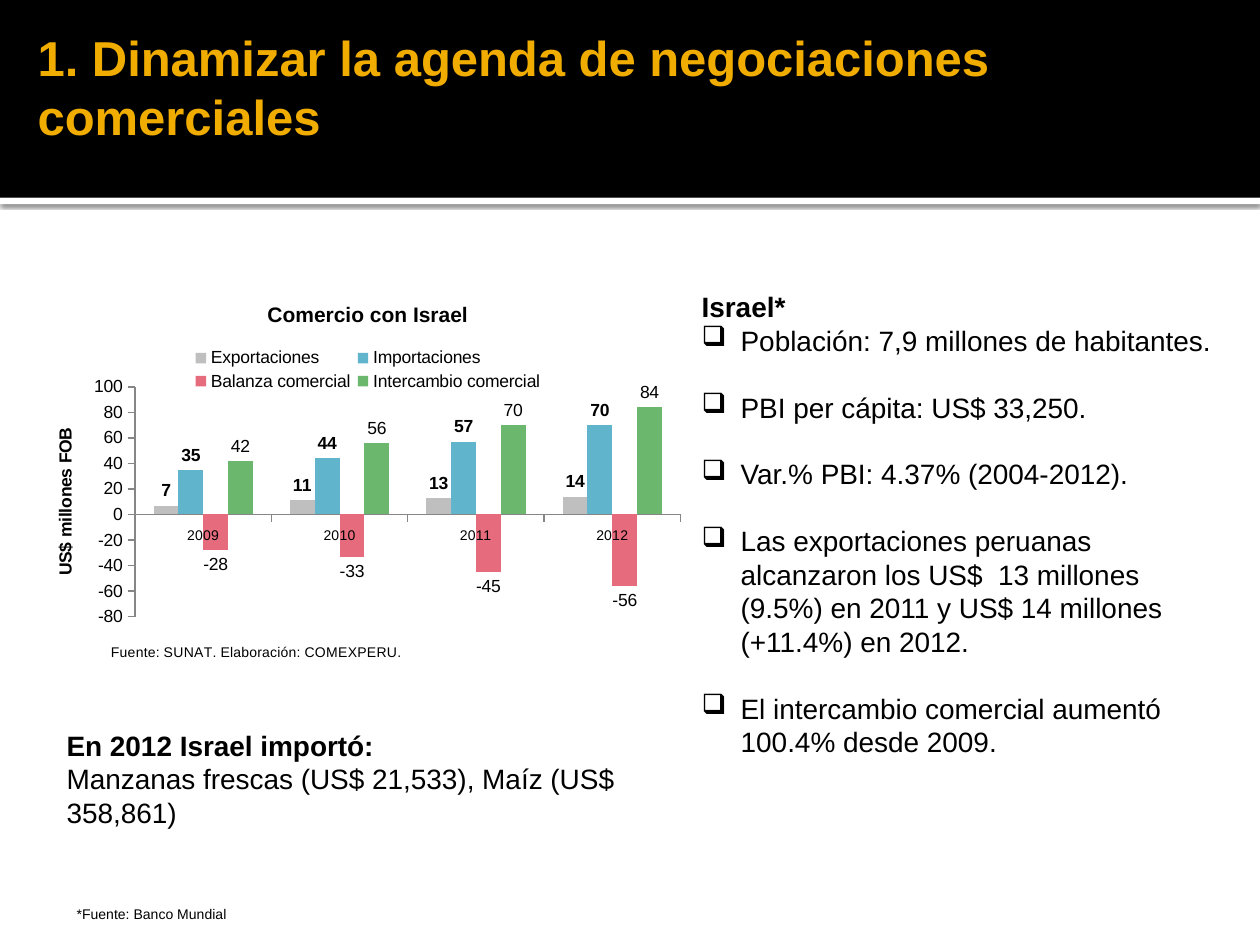
from lxml import etree
from pptx import Presentation, util as u
from pptx.chart.data import CategoryChartData
from pptx.dml.color import RGBColor
from pptx.enum import chart as charts, shapes, text
from pptx.oxml import parse_xml
from pptx.oxml.ns import nsdecls, qn

BLACK = RGBColor(0, 0, 0)
WHITE = RGBColor(0xFF, 0xFF, 0xFF)
GOLD = RGBColor(0xF0, 0xAD, 0x00)
AXIS_GRAY = RGBColor(0x86, 0x86, 0x86)
SERIES = [
    ("Exportaciones", (7, 11, 13, 14), RGBColor(0xBF, 0xBF, 0xBF), True),
    ("Importaciones", (35, 44, 57, 70), RGBColor(0x60, 0xB5, 0xCC), True),
    ("Balanza comercial", (-28, -33, -45, -56), RGBColor(0xE6, 0x6C, 0x7D), False),
    ("Intercambio comercial", (42, 56, 70, 84), RGBColor(0x6B, 0xB7, 0x6D), False),
]
FACTS = [
    "Población: 7,9 millones de habitantes.",
    "PBI per cápita: US$ 33,250.",
    "Var.% PBI: 4.37% (2004-2012).",
    "Las exportaciones peruanas alcanzaron los US$  13 millones (9.5%) en 2011 "
    "y US$ 14 millones (+11.4%) en 2012.",
    "El intercambio comercial aumentó 100.4% desde 2009.",
]

presentation = Presentation()
presentation.slide_width, presentation.slide_height = u.Inches(10), u.Inches(7.5)
slide = presentation.slides.add_slide(presentation.slide_layouts[6])


def add_text(box, lines, size, color=BLACK):
    """Add a text box; each line is (wording, bold, bulleted)."""
    shape = slide.shapes.add_textbox(*map(u.Inches, box))
    frame = shape.text_frame
    frame.word_wrap = True
    for index, (wording, bold, bulleted) in enumerate(lines):
        paragraph = frame.paragraphs[0] if index == 0 else frame.add_paragraph()
        paragraph.text = wording
        if bulleted:
            properties = paragraph._p.get_or_add_pPr()
            properties.set("marL", str(u.Inches(0.31)))
            properties.set("indent", str(-u.Inches(0.31)))
            etree.SubElement(properties, qn("a:buChar")).set("char", "❑")
            if index > 1:
                paragraph.space_before = u.Pt(19)
        font = paragraph.font
        font.name, font.size, font.bold = "Arial", u.Pt(size), bold
        font.color.rgb = color
    return frame


def place(element, before, **shares):
    """Give a chart part a manual layout in shares of the chart's size."""
    for old in element.findall(qn("c:layout")):
        element.remove(old)
    modes = "".join(f'<c:{axis}Mode val="edge"/>' for axis in "xy")
    values = "".join(f'<c:{key} val="{share}"/>' for key, share in shares.items())
    target = '<c:layoutTarget val="inner"/>' if before is None else ""
    layout = parse_xml(f'<c:layout {nsdecls("c")}><c:manualLayout>{target}{modes}{values}'
                       '</c:manualLayout></c:layout>')
    if before is None:
        element.insert(0, layout)
    else:
        element.find(qn(before)).addnext(layout)


# Header band and the white strip with its shadow
for top, height, color in ((1.57, 0.05, WHITE), (0, 1.57, BLACK)):
    band = slide.shapes.add_shape(shapes.MSO_SHAPE.RECTANGLE, 0, u.Inches(top),
                                  presentation.slide_width, u.Inches(height))
    band.shadow.inherit = False
    band.fill.solid()
    band.fill.fore_color.rgb = color
    band.line.fill.background()
    if color == WHITE:
        effects = band._element.spPr.find(qn("a:effectLst"))
        effects.append(parse_xml(
            f'<a:outerShdw {nsdecls("a")} blurRad="{u.Pt(2.5)}" dist="{u.Pt(0.8)}" '
            'dir="5400000" algn="tl" rotWithShape="0"><a:srgbClr val="000000">'
            '<a:alpha val="60000"/></a:srgbClr></a:outerShdw>'))

title = add_text((0.2, 0.06, 7.72, 1.25),
                 [("1. Dinamizar la agenda de negociaciones comerciales", True, False)], 28, GOLD)
title.vertical_anchor = text.MSO_ANCHOR.MIDDLE
title.margin_right = u.Inches(0.05)

# Trade chart
data = CategoryChartData(number_format="#,##0")
data.categories = ["2009", "2010", "2011", "2012"]
for name, values, _, _ in SERIES:
    data.add_series(name, values)
chart = slide.shapes.add_chart(charts.XL_CHART_TYPE.COLUMN_CLUSTERED,
                               *map(u.Inches, (0.28, 2.25, 5.28, 3.04)), data).chart
chart.font.name, chart.font.size = "Arial", u.Pt(10)
chart.font.color.rgb = BLACK

plot = chart.plots[0]
plot.gap_width, plot.overlap, plot.vary_by_categories = 150, 0, False
for series, (_, _, color, bold) in zip(plot.series, SERIES):
    series.format.fill.solid()
    series.format.fill.fore_color.rgb = color
    series.invert_if_negative = False
    labels = series.data_labels
    labels.show_value = True
    labels.number_format, labels.number_format_is_linked = "#,##0", False
    labels.position = charts.XL_LABEL_POSITION.OUTSIDE_END
    labels.font.name, labels.font.size, labels.font.bold = "Arial", u.Pt(10), bold
    labels.font.color.rgb = BLACK

category_axis, value_axis = chart.category_axis, chart.value_axis
value_axis.minimum_scale, value_axis.maximum_scale, value_axis.major_unit = -80, 100, 20
value_axis.has_major_gridlines = False
category_axis.tick_labels.font.size = u.Pt(8)
for axis in (category_axis, value_axis):
    axis.major_tick_mark = charts.XL_TICK_MARK.OUTSIDE
    axis.format.line.color.rgb = AXIS_GRAY
    axis.format.line.width = u.Pt(0.75)

for owner, wording, size, bold in (
        (chart.chart_title, "Comercio con Israel", 12, True),
        (category_axis.axis_title, "Fuente: SUNAT. Elaboración: COMEXPERU.", 8, False),
        (value_axis.axis_title, "US$ millones FOB", 10, True)):
    paragraph = owner.text_frame.paragraphs[0]
    paragraph.text = wording
    font = paragraph.font
    font.name, font.size, font.bold = "Arial", u.Pt(size), bold
    font.color.rgb = BLACK

chart.has_legend = True
chart.legend.position = charts.XL_LEGEND_POSITION.TOP
chart.legend.include_in_layout = False
chart.legend.font.name, chart.legend.font.size = "Arial", u.Pt(10)
chart.legend.font.color.rgb = BLACK

place(plot._element.getparent(), None, x=0.15, y=0.27, w=0.82, h=0.6)
place(chart.legend._element, "c:legendPos", x=0.23, y=0.16, w=0.54, h=0.13)
place(category_axis.axis_title._element, "c:tx", x=0.11, y=0.93)

# Country facts, imports and source
add_text((5.47, 2.25, 4.25, 4.41),
         [("Israel*", True, False)] + [(fact, False, True) for fact in FACTS], 16)
add_text((0.43, 5.73, 4.72, 1.18),
         [("En 2012 Israel importó:", True, False),
          ("Manzanas frescas (US$ 21,533), Maíz (US$ 358,861)", False, False)], 16)
add_text((0.51, 7.14, 3.54, 0.24), [("*Fuente: Banco Mundial", False, False)], 8)

presentation.save("out.pptx")
